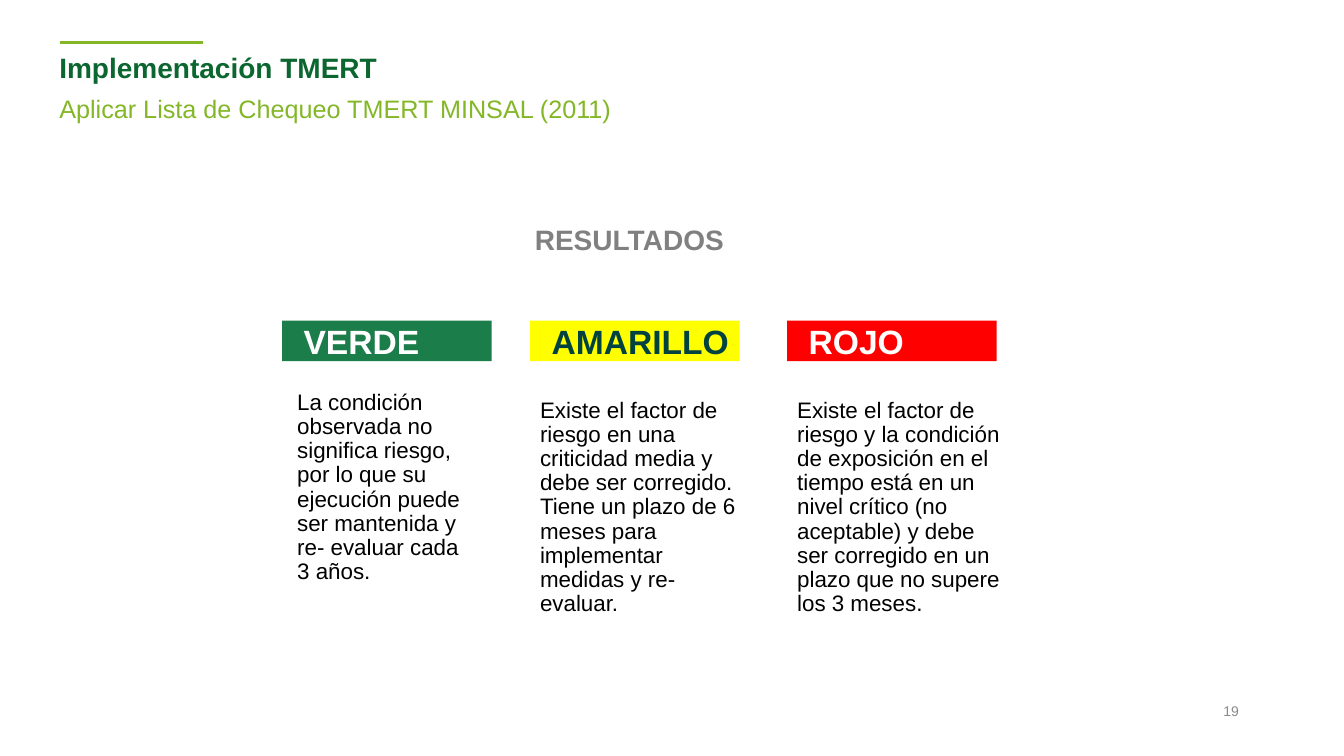
from dataclasses import dataclass

from lxml import etree
from pptx import Presentation
from pptx.dml.color import RGBColor
from pptx.enum.shapes import MSO_CONNECTOR, MSO_SHAPE
from pptx.enum.text import MSO_ANCHOR, MSO_AUTO_SIZE, PP_ALIGN
from pptx.oxml.ns import qn
from pptx.util import Cm, Pt

LEFT, CENTER, RIGHT = PP_ALIGN.LEFT, PP_ALIGN.CENTER, PP_ALIGN.RIGHT
TOP = MSO_ANCHOR.TOP
NO_FIT = MSO_AUTO_SIZE.NONE
RECT = MSO_SHAPE.RECTANGLE
STRAIGHT = MSO_CONNECTOR.STRAIGHT


@dataclass(frozen=True)
class Theme:
    font: str = "Arial"
    forest: str = "0C662F"
    lime: str = "83B727"
    gray: str = "808080"
    pale: str = "8A8A8A"
    black: str = "000000"
    white: str = "FFFFFF"
    teal: str = "00423F"
    green: str = "1B7D4A"
    yellow: str = "FFFF00"
    red: str = "FF0000"
    head: int = 20
    sub: int = 18
    label: int = 24
    note: int = 16
    page: int = 10


THEME = Theme()


@dataclass(frozen=True)
class Box:
    """Place and size in centimetres."""
    left: float
    top: float
    width: float
    height: float

    def cm(self) -> list:
        return [Cm(n) for n in (self.left, self.top, self.width, self.height)]


@dataclass(frozen=True)
class Style:
    size: int
    color: str
    bold: bool = False
    align: PP_ALIGN = LEFT
    lead: float = 0.9


@dataclass(frozen=True)
class Level:
    name: str
    fill: str
    ink: str
    left: float
    wide: float
    note: Box
    text: str


BAR_TOP, BAR_WIDTH, BAR_HEIGHT = 8.08, 5.28, 1.02
LABEL_SHIFT = 0.29

LEVELS = [
    Level("VERDE", THEME.green, THEME.white, 7.11, 4.7,
          Box(7.24, 9.73, 4.98, 5.18),
          "La condición observada no significa riesgo, por lo que su "
          "ejecución puede ser mantenida y re- evaluar cada 3 años."),
    Level("AMARILLO", THEME.yellow, THEME.teal, 13.36, 4.98,
          Box(13.36, 9.93, 5.59, 5.79),
          "Existe el factor de riesgo en una criticidad media y debe ser "
          "corregido. Tiene un plazo de 6 meses para implementar medidas "
          "y re-evaluar."),
    Level("ROJO", THEME.red, THEME.white, 19.84, 4.7,
          Box(19.84, 9.93, 5.64, 5.79),
          "Existe el factor de riesgo y la condición de exposición en el "
          "tiempo está en un nivel crítico (no aceptable) y debe ser "
          "corregido en un plazo que no supere los 3 meses."),
]


def assign(target, values: dict) -> None:
    for name, value in values.items():
        setattr(target, name, value)


def write(shape, text: str, style: Style) -> None:
    frame = shape.text_frame
    assign(frame, {"word_wrap": True, "auto_size": NO_FIT,
                   "vertical_anchor": TOP})
    frame.text = text
    line = frame.paragraphs[0]
    props = line._p.get_or_add_pPr()
    assign(line, {"alignment": style.align, "line_spacing": style.lead,
                  "space_before": Pt(0)})
    if shape.is_placeholder:
        props.set("marL", "0")
        props.set("indent", "0")
        etree.SubElement(props, qn("a:buNone"))
    font = line.runs[0].font
    assign(font, {"name": THEME.font, "size": Pt(style.size),
                  "bold": style.bold})
    font.color.rgb = RGBColor.from_string(style.color)


def fill_holder(holder, box: Box, text: str, style: Style) -> None:
    assign(holder, dict(zip(("left", "top", "width", "height"), box.cm())))
    write(holder, text, style)


def add_text(slide, box: Box, text: str, style: Style) -> None:
    write(slide.shapes.add_textbox(*box.cm()), text, style)


def add_rule(slide) -> None:
    rule = slide.shapes.add_connector(
        STRAIGHT, Cm(1.5), Cm(1.07), Cm(5.11), Cm(1.07))
    rule.line.color.rgb = RGBColor.from_string(THEME.lime)
    rule.line.width = Pt(1.75)
    etree.SubElement(rule._element.spPr, qn("a:effectLst"))


def add_level(slide, level: Level) -> None:
    """Draw a bar with its label and the note below it."""
    place = Box(level.left, BAR_TOP, BAR_WIDTH, BAR_HEIGHT)
    bar = slide.shapes.add_shape(RECT, *place.cm())
    bar.shadow.inherit = False
    bar.fill.solid()
    bar.fill.fore_color.rgb = RGBColor.from_string(level.fill)
    bar.line.fill.background()
    label = Box(level.left + LABEL_SHIFT, BAR_TOP, level.wide, BAR_HEIGHT)
    add_text(slide, label, level.name, Style(THEME.label, level.ink, True))
    add_text(slide, level.note, level.text, Style(THEME.note, THEME.black))


def main() -> None:
    deck = Presentation()
    assign(deck, {"slide_width": Cm(33.87), "slide_height": Cm(19.05)})
    slide = deck.slides.add_slide(deck.slide_layouts[1])
    add_rule(slide)
    fill_holder(slide.shapes.title, Box(1.24, 1.24, 19.91, 1.14),
                "Implementación TMERT", Style(THEME.head, THEME.forest, True))
    fill_holder(slide.placeholders[1], Box(1.24, 2.31, 19.91, 0.99),
                "Aplicar Lista de Chequeo TMERT MINSAL (2011)",
                Style(THEME.sub, THEME.lime))
    add_text(slide, Box(26.34, 17.58, 5.13, 1.02), "19",
             Style(THEME.page, THEME.pale, align=RIGHT, lead=1.0))
    add_text(slide, Box(10.74, 5.59, 10.24, 1.02), "RESULTADOS",
             Style(THEME.head, THEME.gray, True, CENTER))
    for level in LEVELS:
        add_level(slide, level)
    deck.save("out.pptx")


if __name__ == "__main__":
    main()
